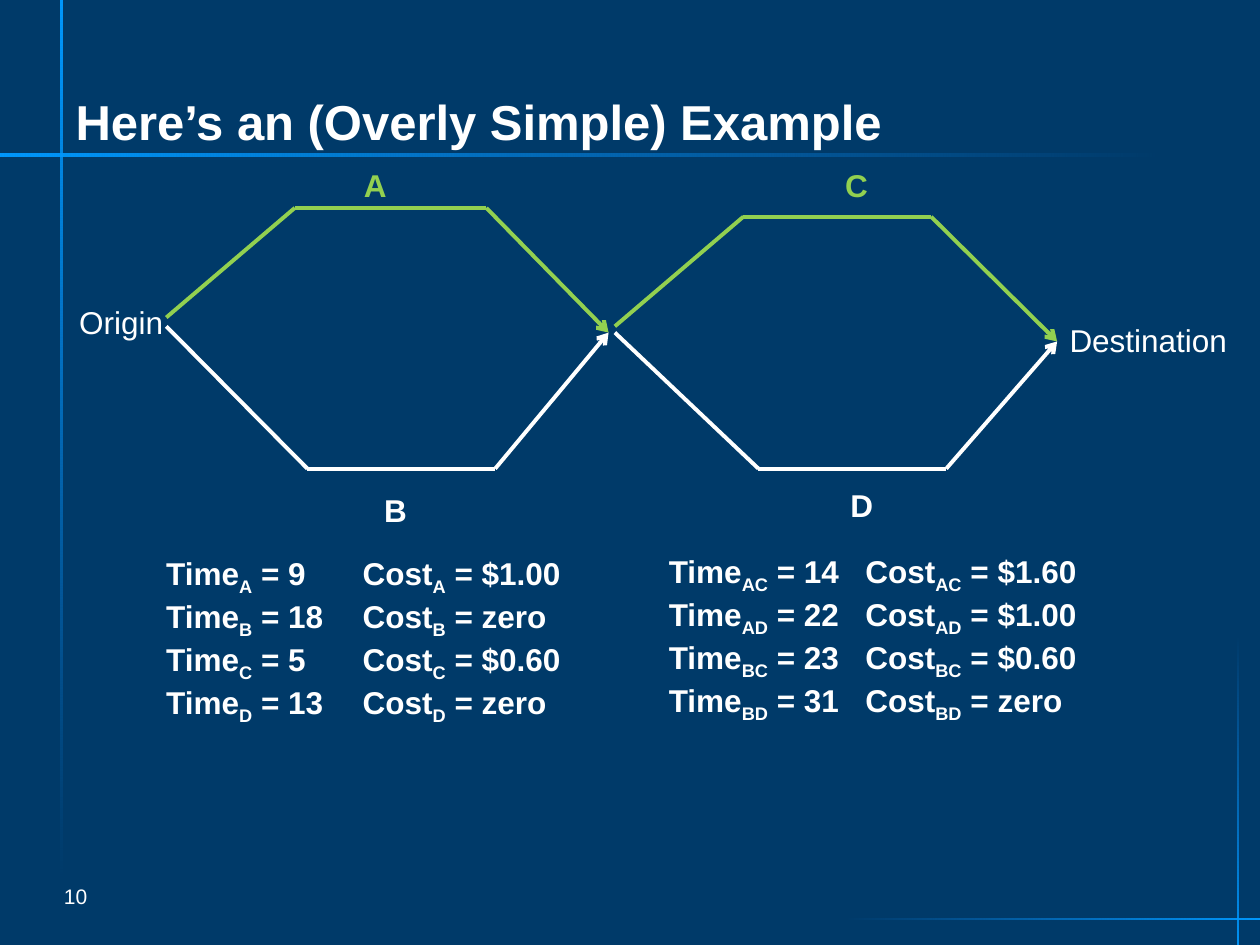
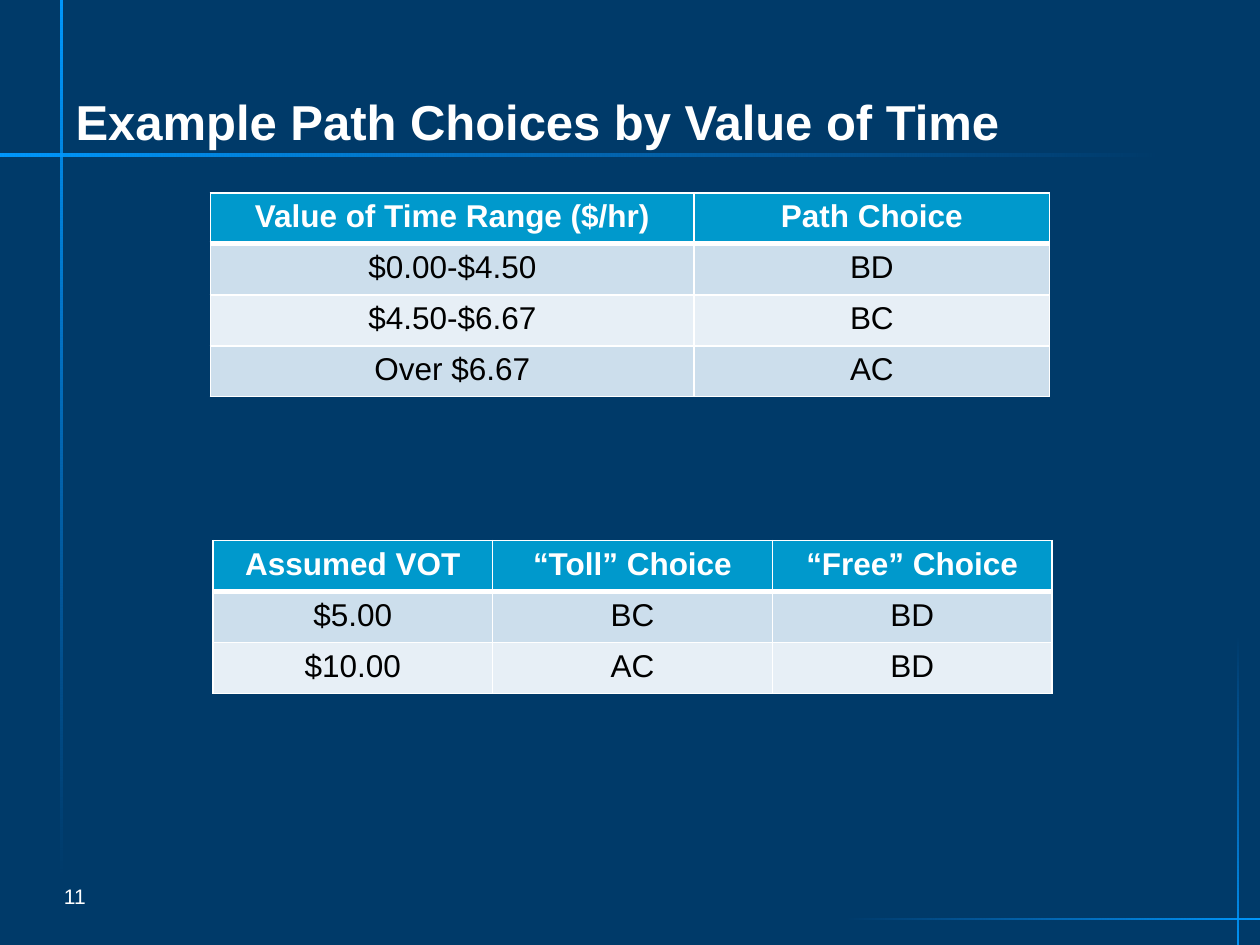
"""Build two slides on path choice by value of time."""
from itertools import pairwise

from lxml.etree import SubElement
from pptx import Presentation
from pptx.dml.color import RGBColor
from pptx.enum.shapes import MSO_CONNECTOR as Connector, MSO_SHAPE as Shape
from pptx.enum.text import MSO_ANCHOR as Anchor, MSO_AUTO_SIZE as AutoSize, PP_ALIGN as Align
from pptx.oxml.ns import qn
from pptx.util import Emu, Inches, Pt

NAVY = RGBColor(0x00, 0x3A, 0x69)
GLOW = RGBColor(0x00, 0x99, 0xFF)
GLOW_END = RGBColor(0x0C, 0x92, 0xFF)
GREEN = RGBColor(0x92, 0xD0, 0x50)
WHITE = RGBColor(0xFF, 0xFF, 0xFF)
BLACK = RGBColor(0x00, 0x00, 0x00)
HEADER = RGBColor(0x00, 0x99, 0xCC)
BANDS = (RGBColor(0xCC, 0xDE, 0xEC), RGBColor(0xE7, 0xEF, 0xF6))

FONT = "Arial"
COLUMNS, ROWS = 100, 75
TITLE_ONLY = 5
GLOW_BARS = (
    (45.2, -34.7, 0.2, 94, 270),
    (4.8, -0.9, 0.2, 70.7, 0),
    (83.8, 56.2, 0.1, 33.5, 90),
    (98.2, 50.4, 0.1, 26.4, 180),
)
ROUTES = {
    GREEN: (
        ((13.2, 25.2), (23.4, 16.5), (38.6, 16.5), (48.3, 26.4)),
        ((48.8, 25.9), (59, 17.2), (73.9, 17.2), (83.9, 27.1)),
    ),
    WHITE: (
        ((48.8, 26.4), (60.2, 37.2), (75.1, 37.2), (83.9, 27.1)),
        ((13.2, 25.9), (24.4, 37.2), (39.3, 37.2), (48.3, 26.4)),
    ),
}
ROUTE_LABELS = (
    ("A", 27.9, 12.7, GREEN),
    ("B", 29.5, 38.5, WHITE),
    ("C", 66.1, 12.7, GREEN),
    ("D", 66.5, 38.1, WHITE),
)
LINK_COSTS = (("A", 9, "$1.00"), ("B", 18, "zero"), ("C", 5, "$0.60"), ("D", 13, "zero"))
PATH_COSTS = (("AC", 14, "$1.60"), ("AD", 22, "$1.00"), ("BC", 23, "$0.60"), ("BD", 31, "zero"))
PATH_BY_RANGE = (
    ("Value of Time Range ($/hr)", "Path Choice"),
    ("$0.00-$4.50", "BD"),
    ("$4.50-$6.67", "BC"),
    ("Over $6.67", "AC"),
)
CHOICE_BY_VOT = (
    ("Assumed VOT", "“Toll” Choice", "“Free” Choice"),
    ("$5.00", "BC", "BD"),
    ("$10.00", "AC", "BD"),
)


class Deck:
    """Holds the deck's style and the slide being filled."""

    def __init__(self):
        self.prs = Presentation()
        self.prs.slide_width, self.prs.slide_height = Inches(10), Inches(7.5)
        self.column = self.prs.slide_width / COLUMNS
        self.row = self.prs.slide_height / ROWS
        self.slide = None
        background = self.prs.slide_master.background.fill
        background.solid()
        background.fore_color.rgb = NAVY

    def place(self, left, top, width, height):
        """Turn columns and rows into slide lengths."""
        return (Emu(round(left * self.column)), Emu(round(top * self.row)),
                Emu(round(width * self.column)), Emu(round(height * self.row)))

    def style(self, paragraph, size=18, color=WHITE, bold=False, align=Align.LEFT):
        """Format a paragraph and each of its runs."""
        paragraph.alignment = align
        for run in paragraph.runs:
            font = run.font
            font.name, font.size, font.bold = FONT, Pt(size), bold
            font.color.rgb = color

    def open_slide(self, heading, number):
        """Start a slide with its title and number."""
        self.slide = self.prs.slides.add_slide(self.prs.slide_layouts[TITLE_ONLY])
        title = self.slide.shapes.title
        title.left, title.top, title.width, title.height = self.place(5, -0.1, 90, 12.5)
        frame = title.text_frame
        frame.text = heading
        frame.auto_size, frame.vertical_anchor = AutoSize.NONE, Anchor.BOTTOM
        self.style(frame.paragraphs[0], size=28, bold=True)
        self.label(str(number), 4.1, 69.1, 7.3, size=12, anchor=Anchor.MIDDLE)

    def decorate_master(self):
        """Put the fading guide bars on the slide master."""
        for bar_id, (*area, angle) in enumerate(GLOW_BARS, start=20):
            bar = self.slide.shapes.add_shape(Shape.RECTANGLE, *self.place(*area))
            bar.rotation = angle
            bar.shadow.inherit = False
            bar.line.fill.background()
            bar.fill.gradient()
            bar.fill.gradient_angle = 270
            for stop, color in zip(bar.fill.gradient_stops, (GLOW, GLOW_END)):
                stop.color.rgb = color
            faded = list(bar._element.spPr.iter(qn("a:srgbClr")))[-1]
            SubElement(faded, qn("a:alpha"), val="0")
            bar._element.nvSpPr.cNvPr.id = bar_id
            self.prs.slide_master.shapes._spTree.append(bar._element)

    def text_frame(self, *area):
        """Add a wrapping text box and return its frame."""
        frame = self.slide.shapes.add_textbox(*self.place(*area)).text_frame
        frame.word_wrap = True
        return frame

    def label(self, wording, left, top, width, anchor=Anchor.TOP, **look):
        """Add a one-line label."""
        frame = self.text_frame(left, top, width, 4)
        frame.text, frame.vertical_anchor = wording, anchor
        self.style(frame.paragraphs[0], **look)

    def route(self, stops, color):
        """Join the stops with lines that end in an arrow."""
        for start, end in pairwise(stops):
            link = self.slide.shapes.add_connector(
                Connector.STRAIGHT, *self.place(*start, *end))
            link.line.color.rgb, link.line.width = color, Pt(2.25)
            if end == stops[-1]:
                SubElement(link.line._get_or_add_ln(), qn("a:tailEnd"), type="arrow")
            SubElement(link._element.spPr, qn("a:effectLst"))

    def cost_list(self, costs, *area):
        """List time and cost with subscripted path names."""
        frame = self.text_frame(*area)
        for index, (path, minutes, price) in enumerate(costs):
            line = frame.add_paragraph() if index else frame.paragraphs[0]
            tabs = SubElement(line._p.get_or_add_pPr(), qn("a:tabLst"))
            SubElement(tabs, qn("a:tab"), pos=str(Inches(1.56)), algn="l")
            for wording in ("Time", path, f" = {minutes}\tCost", path, f" = {price}"):
                run = line.add_run()
                run.text = wording
                if wording == path:
                    run.font._element.set("baseline", "-25000")
            self.style(line, bold=True)

    def border(self, cell, sides):
        """Draw white cell borders of the given widths."""
        properties = cell._tc.get_or_add_tcPr()
        for index, (side, width) in enumerate(sides.items()):
            edge = SubElement(properties, qn(f"a:ln{side}"), w=str(Pt(width)))
            properties.insert(index, edge)
            paint = SubElement(edge, qn("a:solidFill"))
            SubElement(paint, qn("a:srgbClr"), val=str(WHITE))

    def table(self, records, left, top, widths):
        """Add a banded table with a heading row."""
        row_height = 4.05
        grid = self.slide.shapes.add_table(
            len(records), len(widths),
            *self.place(left, top, sum(widths), row_height * len(records))).table
        grid.horz_banding = False
        for column, width in zip(grid.columns, widths):
            column.width = Emu(round(width * self.column))
        for row, record in enumerate(records):
            heading = row == 0
            for column, wording in enumerate(record):
                cell = grid.cell(row, column)
                cell.text = wording
                cell.fill.solid()
                cell.fill.fore_color.rgb = HEADER if heading else BANDS[(row - 1) % 2]
                self.style(cell.text_frame.paragraphs[0], bold=heading,
                           color=WHITE if heading else BLACK, align=Align.CENTER)
                self.border(cell, {"L": 1, "R": 1, "T": 3 if row == 1 else 1,
                                   "B": 3 if heading else 1})


def place_routes(deck):
    """Draw the route network and list its times and costs."""
    for color, routes in ROUTES.items():
        for stops in routes:
            deck.route(stops, color)
    for name, left, top, color in ROUTE_LABELS:
        deck.label(name, left, top, 3.1, color=color, bold=True)
    deck.cost_list(LINK_COSTS, 12.2, 43.5, 34.1, 16.2)
    deck.cost_list(PATH_COSTS, 52.1, 43.3, 37.6, 16.2)
    deck.label("Origin", 5.3, 23.6, 12)
    deck.label("Destination", 83.9, 25, 15.4)


def main():
    """Build and save the deck."""
    deck = Deck()
    deck.open_slide("Here’s an (Overly Simple) Example", 10)
    deck.decorate_master()
    place_routes(deck)
    deck.open_slide("Example Path Choices by Value of Time", 11)
    deck.table(PATH_BY_RANGE, 16.7, 15.3, (38.4, 28.2))
    deck.table(CHOICE_BY_VOT, 16.9, 42.9, (22.2,) * 3)
    deck.prs.save("out.pptx")


if __name__ == "__main__":
    main()
